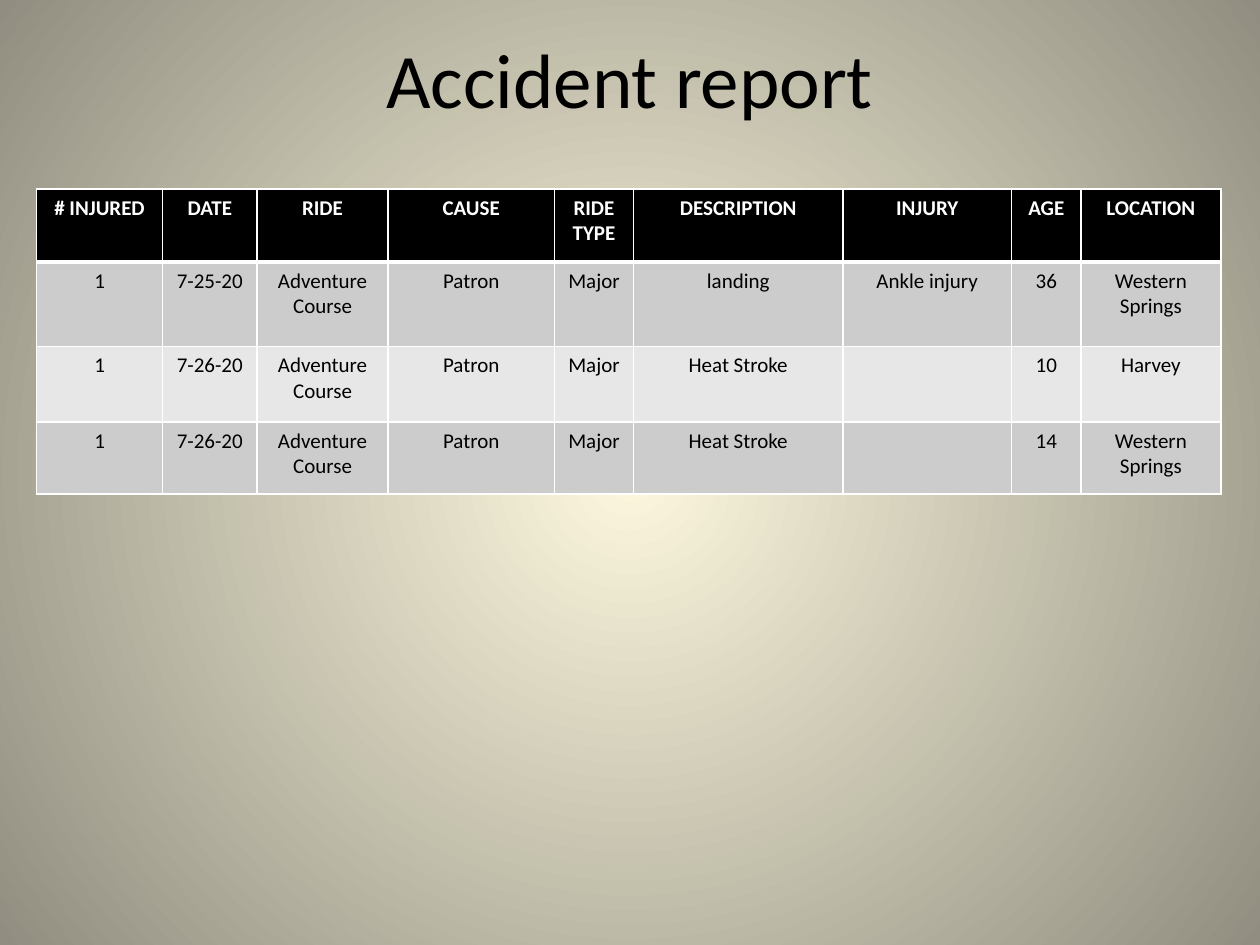
from lxml import etree
from pptx import Presentation
from pptx.dml.color import RGBColor
from pptx.enum.text import MSO_ANCHOR, PP_ALIGN
from pptx.oxml import parse_xml
from pptx.oxml.ns import qn
from pptx.util import Inches, Pt

CENTER = PP_ALIGN.CENTER
MIDDLE = MSO_ANCHOR.MIDDLE
FONT = "Calibri"
HEX = {"glow": "FCF7DD", "edge": "918E81", "black": "000000",
       "white": "FFFFFF", "dark": "CCCCCC", "light": "E7E7E7"}
RGB = {name: RGBColor.from_string(code) for name, code in HEX.items()}
NS = "http://schemas.openxmlformats.org/drawingml/2006/main"

COLS = [1, 0.75, 1.04, 1.32, 0.63, 1.66, 1.34, 0.55, 1.11]
ROWS = [0.58, 0.67, 0.6, 0.57]
DATA = [
    ["# INJURED", "DATE", "RIDE", "CAUSE", "RIDE TYPE",
     "DESCRIPTION", "INJURY", "AGE", "LOCATION"],
    ["1", "7-25-20", "Adventure Course", "Patron", "Major",
     "landing", "Ankle injury", "36", "Western Springs"],
    ["1", "7-26-20", "Adventure Course", "Patron", "Major",
     "Heat Stroke", "", "10", "Harvey"],
    ["1", "7-26-20", "Adventure Course", "Patron", "Major",
     "Heat Stroke", "", "14", "Western Springs"],
]


def style(para, size, color, bold=False):
    para.alignment = CENTER
    font = para.font
    font.name, font.size, font.bold = FONT, Pt(size), bold
    font.color.rgb = RGB[color]


def border(cell, side, width):
    line = etree.SubElement(cell._tc.get_or_add_tcPr(), qn(f"a:ln{side}"),
                            w=str(Pt(width)))
    fill = etree.SubElement(line, qn("a:solidFill"))
    etree.SubElement(fill, qn("a:srgbClr"), val=HEX["white"])


prs = Presentation()
prs.slide_width, prs.slide_height = Inches(10), Inches(7.5)
slide = prs.slides.add_slide(prs.slide_layouts[5])

# Radial background, bright in the middle
back = slide.background.fill
back.gradient()
for stop, name in zip(back.gradient_stops, ("glow", "edge")):
    stop.color.rgb = RGB[name]
lin = next(slide._element.iter(qn("a:lin")))
lin.getparent().replace(lin, parse_xml(
    f'<a:path xmlns:a="{NS}" path="circle">'
    '<a:fillToRect l="50000" t="50000" r="50000" b="50000"/></a:path>'))

title = slide.shapes.title
title.left, title.top = Inches(0.5), Inches(0.08)
title.width, title.height = Inches(9), Inches(1.08)
title.text_frame.text = "Accident report"
title.text_frame.vertical_anchor = MIDDLE
style(title.text_frame.paragraphs[0], 44, "black")

table = slide.shapes.add_table(
    len(ROWS), len(COLS), Inches(0.29), Inches(1.5),
    Inches(sum(COLS)), Inches(sum(ROWS))).table
for col, width in zip(table.columns, COLS):
    col.width = Inches(width)
for row, height in zip(table.rows, ROWS):
    row.height = Inches(height)

for r, texts in enumerate(DATA):
    head = r == 0
    shade = "black" if head else "dark" if r % 2 else "light"
    for c, text in enumerate(texts):
        cell = table.cell(r, c)
        cell.text = text
        style(cell.text_frame.paragraphs[0], 12,
              "white" if head else "black", head)
        for side in "LRTB":
            thick = (head and side == "B") or (r == 1 and side == "T")
            border(cell, side, 3 if thick else 1)
        cell.fill.solid()
        cell.fill.fore_color.rgb = RGB[shade]

prs.save("out.pptx")
